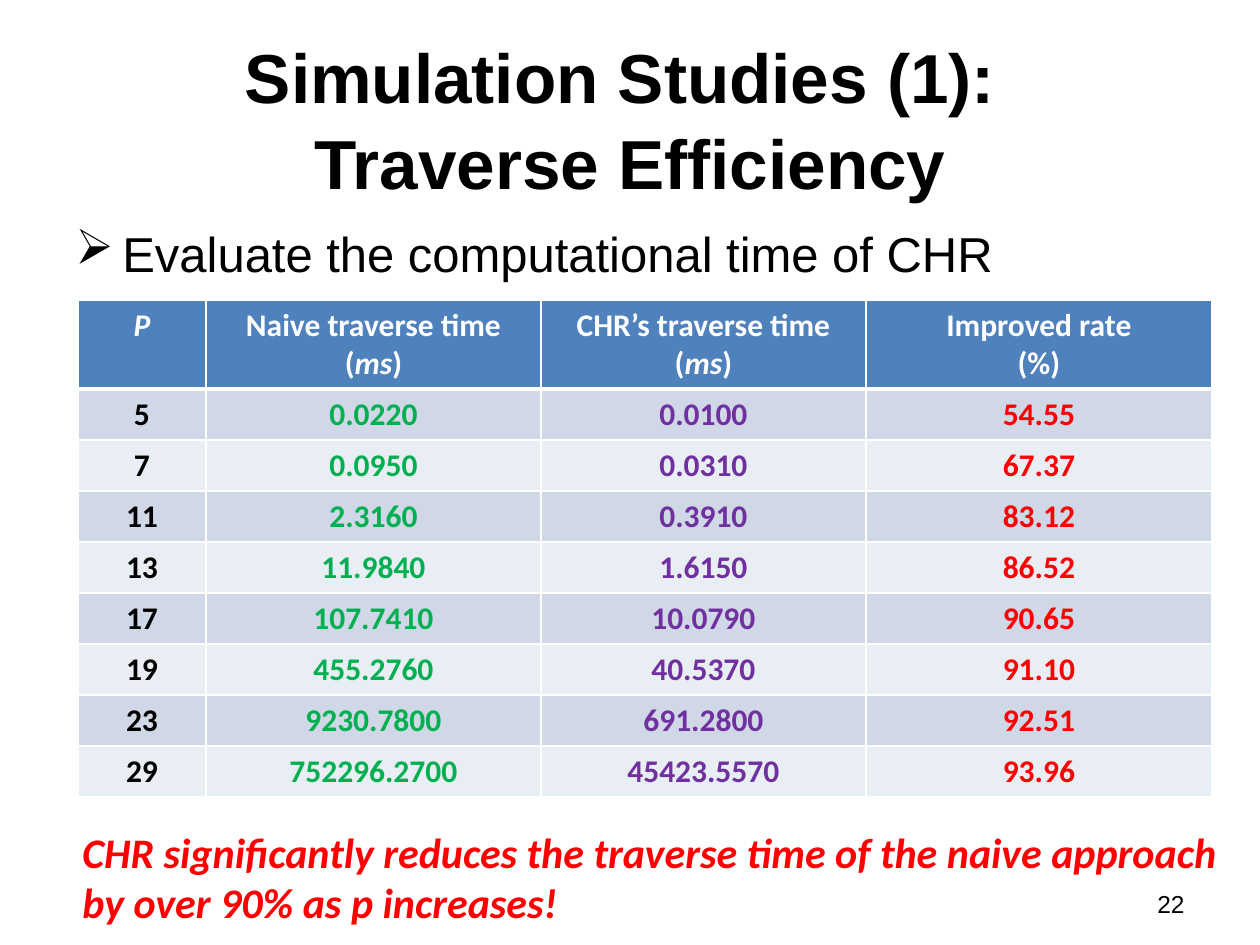
import pptx
import pptx.util
import pptx.dml.color
import pptx.enum.text
import pptx.oxml.ns
from lxml import etree

PX = 914400 / 126
ALIGN = pptx.enum.text.PP_ALIGN
ANCHOR = pptx.enum.text.MSO_ANCHOR

COLORS = {
    "black": "000000", "white": "FFFFFF", "header": "4F81BD",
    "band_dark": "D0D8E8", "band_light": "E9EDF4",
    "green": "00B050", "purple": "7030A0", "red": "FF0000",
}

TITLE = ["Simulation Studies (1): \vTraverse Efficiency"]
BULLET = ["Evaluate the computational time of CHR"]
CONCLUSION = [
    "CHR significantly reduces the traverse time of the naive approach",
    "by over 90% as p increases!",
]
PAGE_NUMBER = ["22"]

HEADERS = [
    [[("P", True)]],
    [[("Naive traverse time", False)], [("(", False), ("ms", True), (")", False)]],
    [[("CHR’s traverse time", False)], [("(", False), ("ms", True), (")", False)]],
    [[("Improved rate", False)], [("(%)", False)]],
]
RESULTS = [
    ("5", "0.0220", "0.0100", "54.55"),
    ("7", "0.0950", "0.0310", "67.37"),
    ("11", "2.3160", "0.3910", "83.12"),
    ("13", "11.9840", "1.6150", "86.52"),
    ("17", "107.7410", "10.0790", "90.65"),
    ("19", "455.2760", "40.5370", "91.10"),
    ("23", "9230.7800", "691.2800", "92.51"),
    ("29", "752296.2700", "45423.5570", "93.96"),
]
COLUMN_COLORS = ["black", "green", "purple", "red"]
COLUMN_WIDTHS = [128, 335, 325, 346]
HEADER_HEIGHT, ROW_HEIGHT = 89, 51


def px(length):
    return pptx.util.Emu(round(length * PX))


def rgb(name):
    return pptx.dml.color.RGBColor.from_string(COLORS[name])


def style(font, size, color, name, bold=False, italic=None):
    font.size = pptx.util.Pt(size)
    font.color.rgb = rgb(color)
    font.name = name
    font.bold = bold
    font.italic = italic


def add_text(slide, box, lines, font, align=ALIGN.LEFT, anchor=ANCHOR.TOP):
    frame = slide.shapes.add_textbox(*map(px, box)).text_frame
    frame.word_wrap = True
    frame.vertical_anchor = anchor
    frame.text = "\n".join(lines)
    for paragraph in frame.paragraphs:
        paragraph.alignment = align
        style(paragraph.font, *font)
    return frame


def add_bullet(paragraph, symbol, indent):
    properties = paragraph._p.get_or_add_pPr()
    properties.set("marL", str(px(indent)))
    properties.set("indent", str(-px(indent)))
    bullet = etree.Element(pptx.oxml.ns.qn("a:buChar"), char=symbol)
    defaults = properties.find(pptx.oxml.ns.qn("a:defRPr"))
    defaults.addprevious(bullet)


def set_borders(cell, bottom_width=1, top_width=1):
    properties = cell._tc.get_or_add_tcPr()
    widths = {"L": 1, "R": 1, "T": top_width, "B": bottom_width}
    for position, (side, width) in enumerate(widths.items()):
        line = etree.Element(pptx.oxml.ns.qn(f"a:ln{side}"), w=str(pptx.util.Pt(width)))
        fill = etree.SubElement(line, pptx.oxml.ns.qn("a:solidFill"))
        etree.SubElement(fill, pptx.oxml.ns.qn("a:srgbClr"), val=COLORS["white"])
        properties.insert(position, line)


def fill_cell(cell, paragraphs, color, background):
    cell.fill.solid()
    cell.fill.fore_color.rgb = rgb(background)
    frame = cell.text_frame
    for index, pieces in enumerate(paragraphs):
        paragraph = frame.add_paragraph() if index else frame.paragraphs[0]
        paragraph.alignment = ALIGN.CENTER
        style(paragraph.font, 18, color, "Calibri", True)
        for text, italic in pieces:
            run = paragraph.add_run()
            run.text = text
            style(run.font, 18, color, "Calibri", True, italic)


def add_results(slide):
    height = HEADER_HEIGHT + ROW_HEIGHT * len(RESULTS)
    box = (78, 300, sum(COLUMN_WIDTHS), height)
    table = slide.shapes.add_table(len(RESULTS) + 1, len(HEADERS), *map(px, box)).table
    for column, width in zip(table.columns, COLUMN_WIDTHS):
        column.width = px(width)
    for index, row in enumerate(table.rows):
        row.height = px(ROW_HEIGHT if index else HEADER_HEIGHT)
    for column, heading in enumerate(HEADERS):
        cell = table.cell(0, column)
        fill_cell(cell, heading, "white", "header")
        set_borders(cell, bottom_width=3)
    for row, values in enumerate(RESULTS, 1):
        band = "band_dark" if row % 2 else "band_light"
        for column, value in enumerate(values):
            cell = table.cell(row, column)
            fill_cell(cell, [[(value, False)]], COLUMN_COLORS[column], band)
            set_borders(cell, top_width=3 if row == 1 else 1)


def main():
    deck = pptx.Presentation()
    deck.slide_width, deck.slide_height = px(1260), px(945)
    slide = deck.slides.add_slide(deck.slide_layouts[6])

    title = add_text(slide, (63, 38, 1134, 158), TITLE,
                     (39.6, "black", "Arial", True), ALIGN.CENTER, ANCHOR.MIDDLE)
    title.paragraphs[0].line_spacing = 1.04

    body = add_text(slide, (63, 217, 1134, 627), BULLET, (28, "black", "Arial"))
    body.paragraphs[0].space_before = pptx.util.Pt(5.6)
    add_bullet(body.paragraphs[0], "➢", 47)

    add_results(slide)
    add_text(slide, (70, 820, 1161, 115), CONCLUSION,
             (24, "red", "Calibri", True, True))
    add_text(slide, (903, 882, 294, 44), PAGE_NUMBER,
             (14, "black", "Arial"), ALIGN.RIGHT, ANCHOR.MIDDLE)
    deck.save("out.pptx")


if __name__ == "__main__":
    main()
